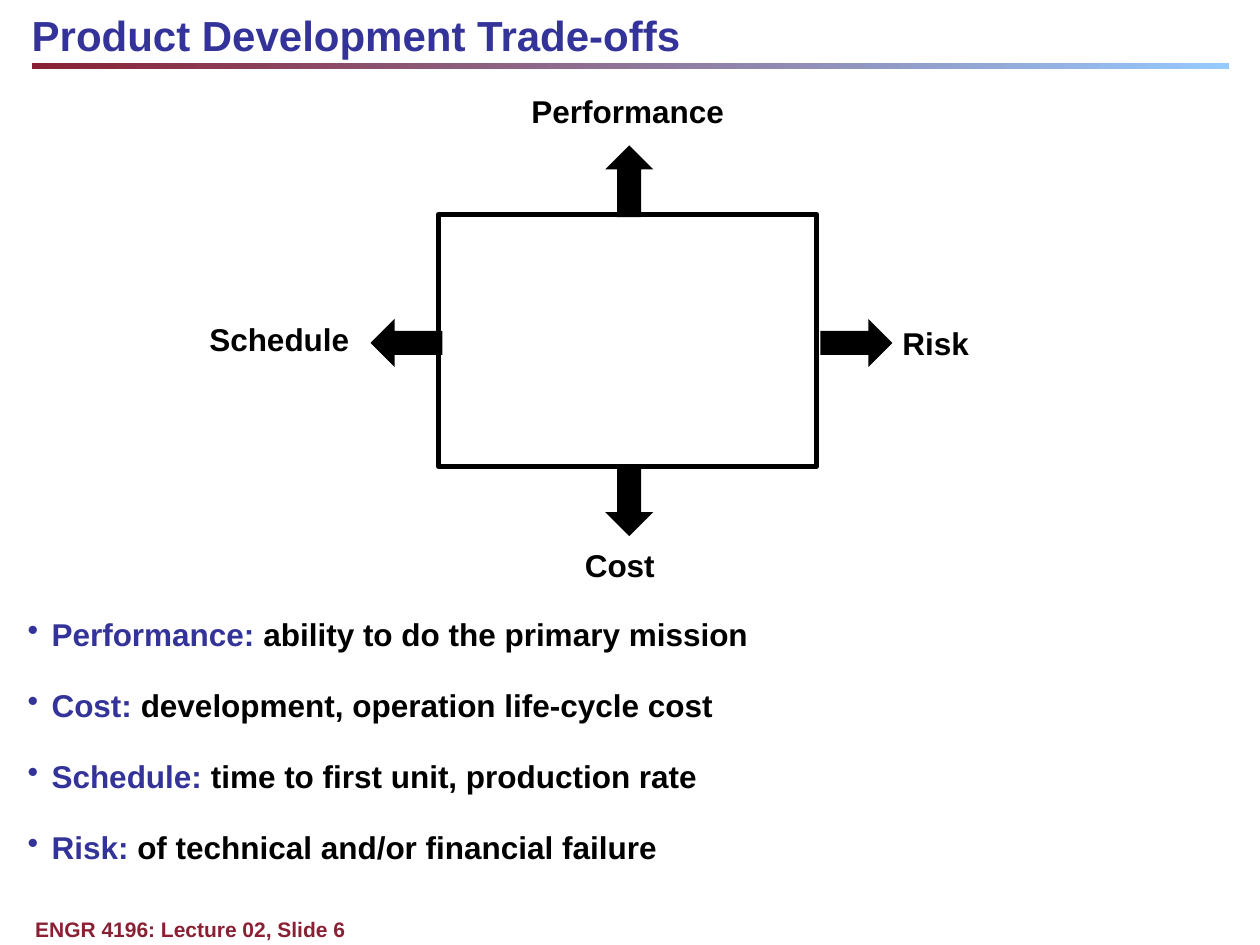
from dataclasses import dataclass

from lxml import etree
from pptx import Presentation
from pptx import util as u
from pptx.dml.color import RGBColor
from pptx.enum import shapes, text
from pptx.oxml import ns


@dataclass(frozen=True)
class Theme:
    font: str = "Arial"
    ink: RGBColor = RGBColor(0, 0, 0)
    accent: RGBColor = RGBColor(0x33, 0x33, 0x99)
    maroon: RGBColor = RGBColor(0x89, 0x20, 0x34)
    sky: RGBColor = RGBColor(0x95, 0xCA, 0xFF)
    title_size: int = 24
    body_size: int = 18
    footer_size: int = 12


THEME = Theme()


def place(box):
    return [u.Cm(length) for length in box]


def style(paragraph, size, color=None):
    font = paragraph.font
    font.name, font.size, font.bold = THEME.font, u.Pt(size), True
    if color is not None:
        font.color.rgb = color


def add_text_frame(page, box):
    frame = page.shapes.add_textbox(*place(box)).text_frame
    frame.margin_left = frame.margin_top = frame.margin_right = frame.margin_bottom = 0
    frame.word_wrap = True
    return frame


def add_line_of_text(page, box, words, size, color, align=text.PP_ALIGN.LEFT):
    para = add_text_frame(page, box).paragraphs[0]
    para.text = words
    para.alignment = align
    style(para, size, color)


def add_plain_shape(page, kind, box):
    shape = page.shapes.add_shape(kind, *place(box))
    shape.shadow.inherit = False
    shape.line.fill.background()
    return shape


def add_header(page, box, title):
    left, top, width, height = box
    rule = add_plain_shape(
        page, shapes.MSO_SHAPE.RECTANGLE, (left, top + height - 0.13, width, 0.13)
    )
    rule.fill.gradient()
    rule.fill.gradient_angle = 0
    for stop, color, position in zip(
        rule.fill.gradient_stops, (THEME.maroon, THEME.sky), (0, 1)
    ):
        stop.color.rgb = color
        stop.position = position
    add_line_of_text(
        page, (left, top, 19.05, 1.02), title, THEME.title_size, THEME.accent
    )


def add_trade_off_diagram(page, box):
    left, top, width, height = box
    frame = add_plain_shape(page, shapes.MSO_SHAPE.RECTANGLE, box)
    frame.fill.background()
    frame.line.color.rgb = THEME.ink
    frame.line.width = u.Pt(3)

    length, breadth = 1.45, 0.97
    across, down = (length, breadth), (breadth, length)
    kinds = shapes.MSO_SHAPE
    arrows = [
        (kinds.RIGHT_ARROW, (width + 0.08, 2.11), across),
        (kinds.UP_ARROW, (3.36, -1.39), down),
        (kinds.DOWN_ARROW, (3.36, height - 0.04), down),
        (kinds.LEFT_ARROW, (-1.37, 2.11), across),
    ]
    for kind, (x, y), size in arrows:
        arrow = add_plain_shape(page, kind, (left + x, top + y, *size))
        arrow.fill.solid()
        arrow.fill.fore_color.rgb = THEME.ink

    aligns = text.PP_ALIGN
    labels = [
        ("Schedule", (-4.62, 2.13), (3.15, 1.07), aligns.JUSTIFY),
        ("Cost", (2.95, 6.68), (1.75, 0.94), aligns.JUSTIFY),
        ("Performance", (1.73, -2.47), (4.17, 1.04), aligns.CENTER),
        ("Risk", (9.35, 2.21), (1.6, 0.97), aligns.JUSTIFY),
    ]
    for words, (x, y), size, align in labels:
        add_line_of_text(
            page, (left + x, top + y, *size), words, THEME.body_size, THEME.ink, align
        )


def add_bullet(para, indent):
    properties = para._p.get_or_add_pPr()
    properties.set("marL", str(u.Cm(indent)))
    properties.set("indent", str(-u.Cm(indent)))
    etree.SubElement(properties, ns.qn("a:buChar")).set("char", "•")


def add_definitions(page, box, definitions):
    frame = add_text_frame(page, box)
    for index, (term, meaning) in enumerate(definitions):
        para = frame.add_paragraph() if index else frame.paragraphs[0]
        add_bullet(para, 0.48)
        para.space_after = u.Pt(19)
        style(para, THEME.body_size)
        for words, color in ((f"{term}: ", THEME.accent), (meaning, THEME.ink)):
            span = para.add_run()
            span.text = words
            span.font.color.rgb = color


def add_footer(page, box, words):
    add_line_of_text(page, box, words, THEME.footer_size, THEME.maroon)


def main():
    deck = Presentation()
    deck.slide_width, deck.slide_height = u.Cm(25.4), u.Cm(19.05)
    page = deck.slides.add_slide(deck.slide_layouts[6])

    add_header(page, (0.64, 0.2, 24.13, 1.2), "Product Development Trade-offs")
    add_trade_off_diagram(page, (8.84, 4.32, 7.62, 5.08))
    add_definitions(
        page,
        (0.56, 12.4, 24.13, 5.36),
        [
            ("Performance", "ability to do the primary mission"),
            ("Cost", "development, operation life-cycle cost"),
            ("Schedule", "time to first unit, production rate"),
            ("Risk", "of technical and/or financial failure"),
        ],
    )
    add_footer(page, (0.71, 18.47, 22.66, 0.51), "ENGR 4196: Lecture 02, Slide 6")
    deck.save("out.pptx")


if __name__ == "__main__":
    main()
